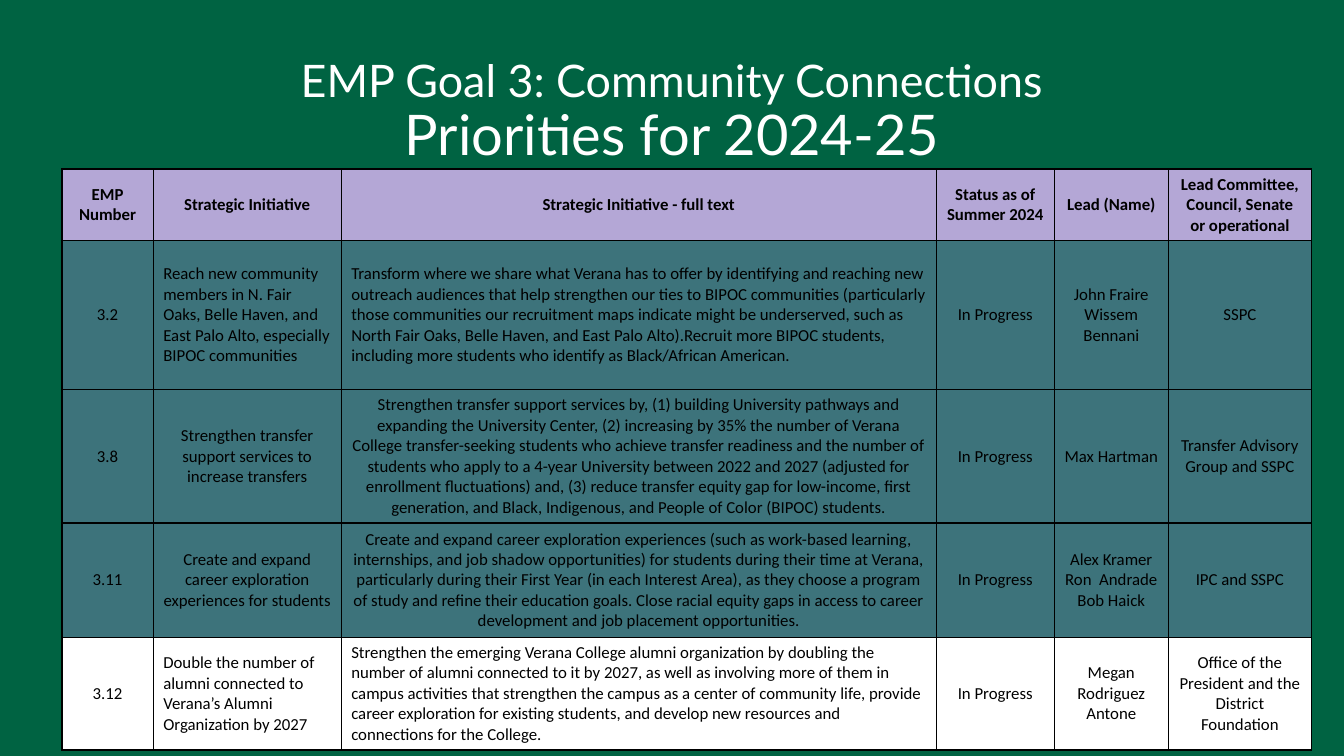
from dataclasses import dataclass

from lxml.etree import SubElement
from pptx import Presentation
from pptx.dml.color import RGBColor
from pptx.enum.text import MSO_ANCHOR, MSO_AUTO_SIZE, PP_ALIGN
from pptx.oxml.ns import qn
from pptx.slide import Slide
from pptx.table import _Cell as Cell
from pptx.util import Emu, Pt

EMU_PER_PX = 9525
GREEN, WHITE, BLACK = "006342", "FFFFFF", "000000"
LAVENDER, VIOLET = "B4A7D6", "CC99FF"
COLUMN_WIDTHS = [87, 179, 567, 112, 109, 136]
LEAD_COLUMN = 4
TEXT_COLUMNS = (1, 2)


@dataclass(frozen=True)
class TableRow:
    height: int
    texts: tuple[str, ...]
    fill: str = VIOLET
    opacity: int = 30
    bold: bool = False
    left_aligned: bool = False
    space_after: int = 6


ROWS = [
    TableRow(68, (
        "EMP\nNumber",
        "Strategic Initiative",
        "Strategic Initiative - full text",
        "Status as of\nSummer 2024",
        "Lead (Name)",
        "Lead Committee, Council, Senate or operational",
    ), fill=LAVENDER, opacity=100, bold=True, space_after=0),
    TableRow(142, (
        "3.2",
        "Reach new community members in N. Fair Oaks, Belle Haven, and East Palo Alto, "
        "especially BIPOC communities",
        "Transform where we share what Verana has to offer by identifying and reaching new "
        "outreach audiences that help strengthen our ties to BIPOC communities (particularly "
        "those communities our recruitment maps indicate might be underserved, such as North "
        "Fair Oaks, Belle Haven, and East Palo Alto).Recruit more BIPOC students, including "
        "more students who identify as Black/African American.",
        "In Progress",
        "John Fraire\nWissem Bennani",
        "SSPC",
    ), left_aligned=True),
    TableRow(127, (
        "3.8",
        "Strengthen transfer support services to increase transfers",
        "Strengthen transfer support services by, (1) building University pathways and "
        "expanding the University Center, (2) increasing by 35% the number of Verana College "
        "transfer-seeking students who achieve transfer readiness and the number of students "
        "who apply to a 4-year University between 2022 and 2027 (adjusted for enrollment "
        "fluctuations) and, (3) reduce transfer equity gap for low-income, first generation, "
        "and Black, Indigenous, and People of Color (BIPOC) students.",
        "In Progress",
        "Max Hartman",
        "Transfer Advisory Group and SSPC",
    )),
    TableRow(109, (
        "3.11",
        "Create and expand career exploration experiences for students",
        "Create and expand career exploration experiences (such as work-based learning, "
        "internships, and job shadow opportunities) for students during their time at Verana, "
        "particularly during their First Year (in each Interest Area), as they choose a "
        "program of study and refine their education goals. Close racial equity gaps in "
        "access to career development and job placement opportunities.",
        "In Progress",
        "Alex Kramer\nRon  Andrade\nBob Haick",
        "IPC and SSPC",
    )),
    TableRow(107, (
        "3.12",
        "Double the number of alumni connected to Verana’s Alumni Organization by 2027",
        "Strengthen the emerging Verana College alumni organization by doubling the number "
        "of alumni connected to it by 2027, as well as involving more of them in campus "
        "activities that strengthen the campus as a center of community life, provide career "
        "exploration for existing students, and develop new resources and connections for "
        "the College.",
        "In Progress",
        "Megan Rodriguez Antone",
        "Office of the President and the District Foundation",
    ), fill=WHITE, opacity=100, left_aligned=True),
]


def px(value: int) -> Emu:
    return Emu(value * EMU_PER_PX)


def rgb(value: str) -> RGBColor:
    return RGBColor.from_string(value)


def apply_format(target: object, values: dict[str, object]) -> None:
    for name, value in values.items():
        setattr(target, name, value)


def add_title(slide: Slide) -> None:
    title = slide.shapes.title
    apply_format(title, {"left": px(88), "top": px(38), "width": px(1104), "height": px(139)})
    apply_format(title.text_frame, {
        "vertical_anchor": MSO_ANCHOR.MIDDLE, "word_wrap": True,
        "auto_size": MSO_AUTO_SIZE.NONE,
    })
    paragraph = title.text_frame.paragraphs[0]
    apply_format(paragraph, {"alignment": PP_ALIGN.CENTER, "line_spacing": 0.9})
    lines = [("EMP Goal 3: Community Connections", 32), ("Priorities for 2024-25", 40)]
    for index, (text, size) in enumerate(lines):
        if index:
            paragraph.add_line_break()
        run = paragraph.add_run()
        run.text = text
        apply_format(run.font, {"name": "Lato", "size": Pt(size)})
        run.font.color.rgb = rgb(WHITE)


def style_cell(cell: Cell, fill: str, opacity: int) -> None:
    """Border the cell on all sides, then fill it: the schema wants this order."""
    properties = cell._tc.get_or_add_tcPr()
    for side in ("lnL", "lnR", "lnT", "lnB"):
        line = SubElement(properties, qn(f"a:{side}"), w=str(Pt(1)))
        solid = SubElement(line, qn("a:solidFill"))
        SubElement(solid, qn("a:srgbClr"), val=BLACK)
    cell.fill.solid()
    cell.fill.fore_color.rgb = rgb(fill)
    if opacity < 100:
        color = properties.find(qn("a:solidFill")).find(qn("a:srgbClr"))
        SubElement(color, qn("a:alpha"), val=str(opacity * 1000))


def fill_cell(cell: Cell, row: TableRow, column: int) -> None:
    style_cell(cell, row.fill, row.opacity)
    cell.text = row.texts[column]
    cell.vertical_anchor = MSO_ANCHOR.MIDDLE
    is_left = row.left_aligned and column in TEXT_COLUMNS
    for paragraph in cell.text_frame.paragraphs:
        apply_format(paragraph, {
            "alignment": PP_ALIGN.LEFT if is_left else PP_ALIGN.CENTER,
            "space_after": Pt(0 if column == LEAD_COLUMN else row.space_after),
        })
        for run in paragraph.runs:
            apply_format(run.font, {"name": "Calibri", "size": Pt(12), "bold": row.bold})
            run.font.color.rgb = rgb(BLACK)


def add_priorities_table(slide: Slide) -> None:
    height = sum(row.height for row in ROWS)
    table = slide.shapes.add_table(
        len(ROWS), len(COLUMN_WIDTHS), px(59), px(161), px(sum(COLUMN_WIDTHS)), px(height)
    ).table
    apply_format(table, {"first_row": False, "horz_banding": False})
    for column, width in zip(table.columns, COLUMN_WIDTHS):
        column.width = px(width)
    for row_index, row in enumerate(ROWS):
        table.rows[row_index].height = px(row.height)
        for column_index in range(len(COLUMN_WIDTHS)):
            fill_cell(table.cell(row_index, column_index), row, column_index)


def main() -> None:
    presentation = Presentation()
    apply_format(presentation, {"slide_width": px(1280), "slide_height": px(720)})
    slide = presentation.slides.add_slide(presentation.slide_layouts.get_by_name("Title Only"))
    slide.background.fill.solid()
    slide.background.fill.fore_color.rgb = rgb(GREEN)
    add_title(slide)
    add_priorities_table(slide)
    presentation.save("out.pptx")


if __name__ == "__main__":
    main()
